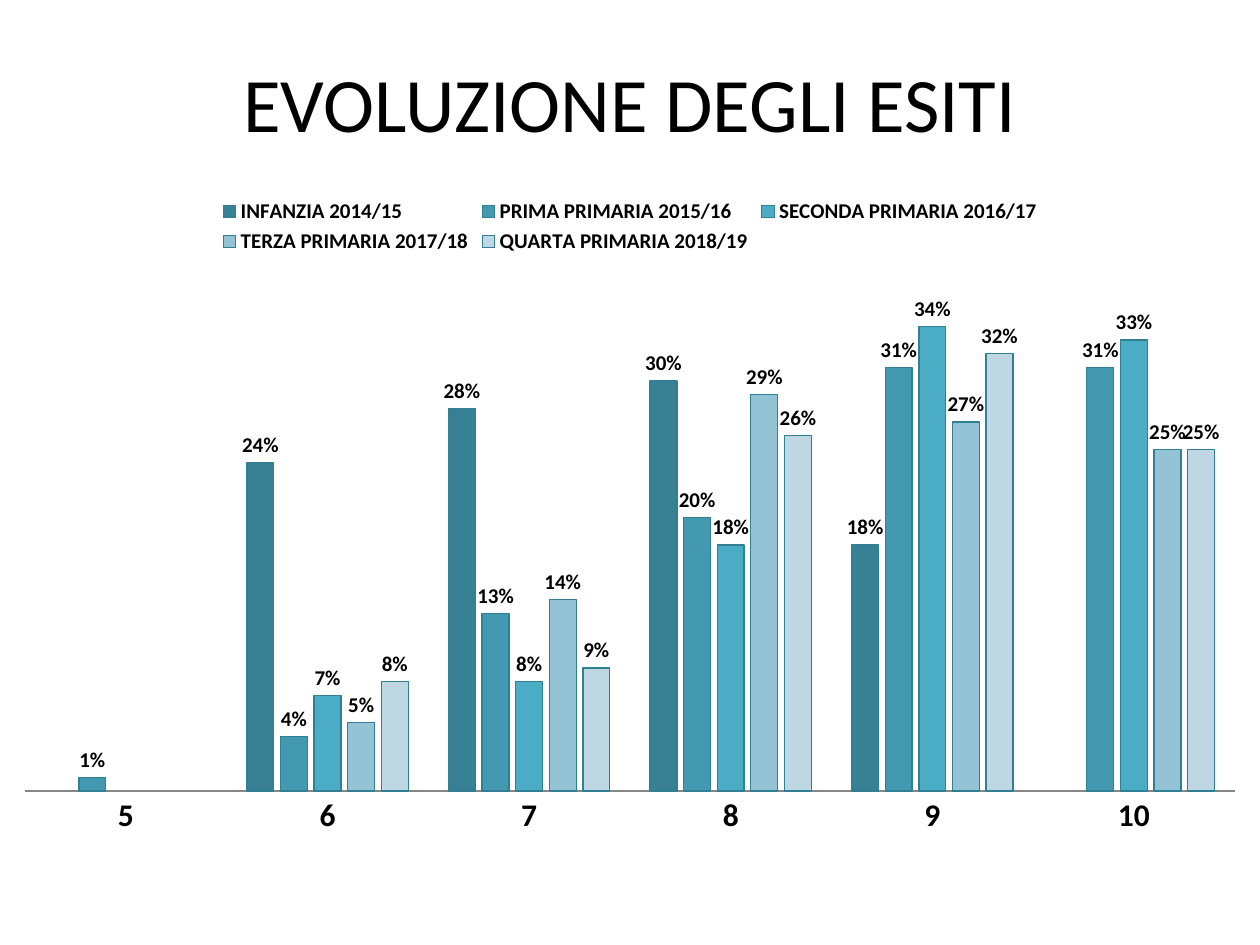
from dataclasses import dataclass
from typing import Optional

from lxml.etree import SubElement
from pptx import Presentation
from pptx.chart.chart import Chart
from pptx.chart.data import CategoryChartData
from pptx.dml.color import RGBColor
from pptx.enum.chart import XL_CHART_TYPE as ChartType
from pptx.enum.chart import XL_LABEL_POSITION as LabelPosition
from pptx.enum.chart import XL_LEGEND_POSITION as LegendPosition
from pptx.enum.chart import XL_TICK_MARK as TickMark
from pptx.enum.text import MSO_ANCHOR, PP_ALIGN
from pptx.oxml.ns import qn
from pptx.slide import Slide
from pptx.util import Cm, Pt


@dataclass(frozen=True)
class Theme:
    font: str = "Calibri"
    text: RGBColor = RGBColor(0, 0, 0)
    axis: RGBColor = RGBColor(0x86, 0x86, 0x86)
    outline: RGBColor = RGBColor(0x31, 0x7F, 0x93)
    title_size: Pt = Pt(44)
    axis_size: Pt = Pt(18)
    label_size: Pt = Pt(12)


@dataclass(frozen=True)
class SchoolYear:
    name: str
    shares: tuple[Optional[float], ...]
    color: str


THEME = Theme()
GRADES = ("5", "6", "7", "8", "9", "10")
SCHOOL_YEARS = (
    SchoolYear("INFANZIA 2014/15", (None, 0.24, 0.28, 0.30, 0.18, None), "388194"),
    SchoolYear("PRIMA PRIMARIA 2015/16", (0.01, 0.04, 0.13, 0.20, 0.31, 0.31), "4299B0"),
    SchoolYear("SECONDA PRIMARIA 2016/17", (None, 0.07, 0.08, 0.18, 0.34, 0.33), "4BACC6"),
    SchoolYear("TERZA PRIMARIA 2017/18", (None, 0.05, 0.14, 0.29, 0.27, 0.25), "93C3D5"),
    SchoolYear("QUARTA PRIMARIA 2018/19", (None, 0.08, 0.09, 0.26, 0.32, 0.25), "BFD7E2"),
)


def set_title(slide: Slide, text: str) -> None:
    title = slide.shapes.title
    title.left, title.top, title.width, title.height = Cm(1.27), Cm(0.76), Cm(22.86), Cm(2.57)
    title.text_frame.text = text
    title.text_frame.vertical_anchor = MSO_ANCHOR.MIDDLE
    paragraph = title.text_frame.paragraphs[0]
    paragraph.alignment = PP_ALIGN.CENTER
    paragraph.font.name = THEME.font
    paragraph.font.size = THEME.title_size
    paragraph.font.color.rgb = THEME.text


def place_plot(chart: Chart, left: float, top: float, width: float, height: float) -> None:
    """Fix the inner plot area, in fractions of the chart frame."""
    plot_area = chart.plots[0]._element.getparent()
    for old_layout in plot_area.findall(qn("c:layout")):
        plot_area.remove(old_layout)
    layout = SubElement(plot_area, qn("c:layout"))
    plot_area.insert(0, layout)
    manual = SubElement(layout, qn("c:manualLayout"))
    settings = {"layoutTarget": "inner", "xMode": "edge", "yMode": "edge",
                "x": left, "y": top, "w": width, "h": height}
    for tag, value in settings.items():
        SubElement(manual, qn(f"c:{tag}")).set("val", str(value))


def add_results_chart(slide: Slide) -> Chart:
    data = CategoryChartData(number_format="0%")
    data.categories = GRADES
    for year in SCHOOL_YEARS:
        data.add_series(year.name, year.shares)
    frame = slide.shapes.add_chart(
        ChartType.COLUMN_CLUSTERED, Cm(0), Cm(3.73), Cm(25.4), Cm(13.28), data)
    chart = frame.chart
    chart.has_title = False
    chart.font.name = THEME.font
    chart.font.size = THEME.axis_size
    chart.font.color.rgb = THEME.text
    return chart


def format_axes(chart: Chart) -> None:
    grades = chart.category_axis
    grades.major_tick_mark = TickMark.NONE
    grades.tick_labels.font.bold = True
    grades.tick_labels.font.size = THEME.axis_size
    grades.format.line.color.rgb = THEME.axis
    shares = chart.value_axis
    shares.minimum_scale, shares.maximum_scale = 0, 0.4
    shares.has_major_gridlines = False
    shares.visible = False


def format_legend(chart: Chart) -> None:
    chart.has_legend = True
    legend = chart.legend
    legend.position = LegendPosition.TOP
    legend.include_in_layout = False
    legend.font.size = THEME.label_size
    legend.font.bold = True


def format_columns(chart: Chart) -> None:
    plot = chart.plots[0]
    plot.vary_by_categories = False
    plot.overlap = -25
    plot.gap_width = 150
    for year, series in zip(SCHOOL_YEARS, plot.series):
        series.format.fill.solid()
        series.format.fill.fore_color.rgb = RGBColor.from_string(year.color)
        series.format.line.color.rgb = THEME.outline
        series.format.line.width = Pt(0.75)
        labels = series.data_labels
        labels.show_value = True
        labels.number_format = "0%"
        labels.number_format_is_linked = False
        labels.position = LabelPosition.OUTSIDE_END
        labels.font.size = THEME.label_size
        labels.font.bold = True


def main() -> None:
    presentation = Presentation()
    presentation.slide_width, presentation.slide_height = Cm(25.4), Cm(19.05)
    slide = presentation.slides.add_slide(presentation.slide_layouts[5])
    set_title(slide, "EVOLUZIONE DEGLI ESITI")
    chart = add_results_chart(slide)
    format_axes(chart)
    format_legend(chart)
    format_columns(chart)
    place_plot(chart, 0.02, 0.09, 0.96, 0.83)
    presentation.save("out.pptx")


if __name__ == "__main__":
    main()
